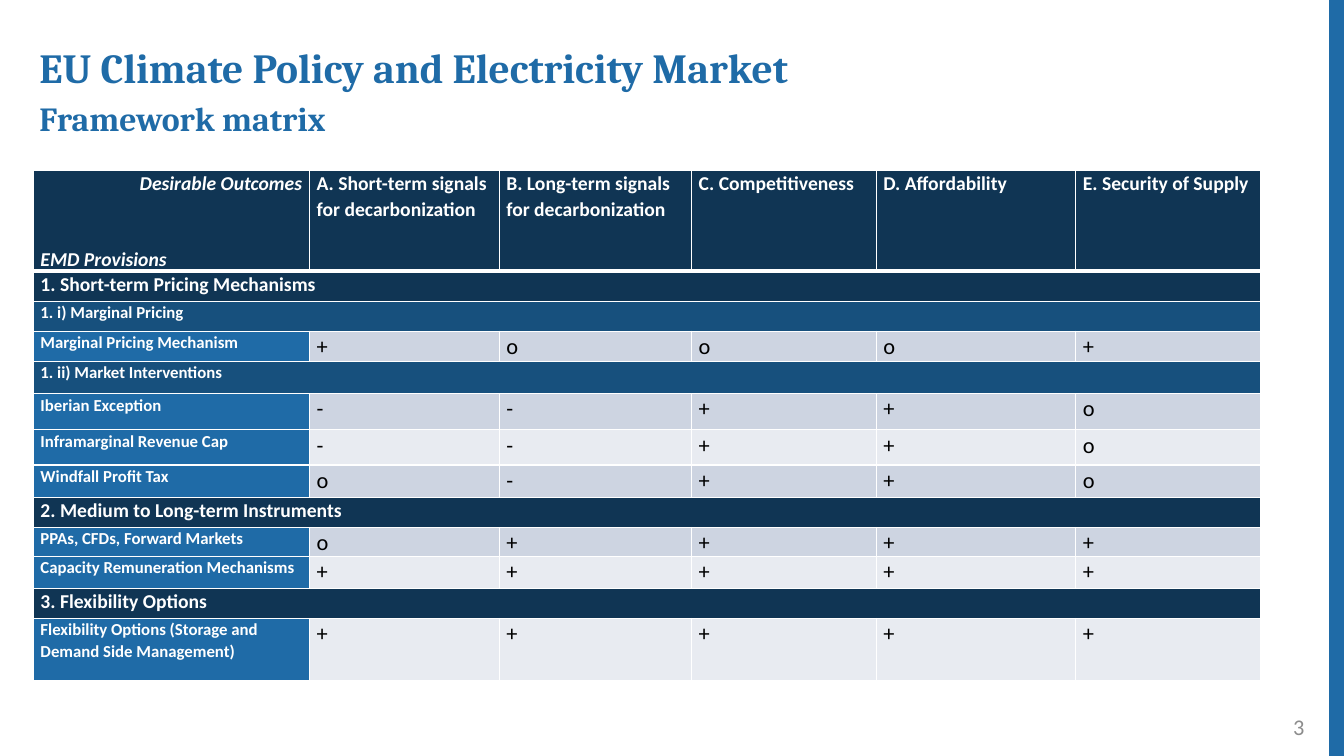
from lxml import etree
from pptx import Presentation
from pptx.dml.color import RGBColor
from pptx.enum.shapes import MSO_CONNECTOR
from pptx.enum.text import MSO_ANCHOR, MSO_AUTO_SIZE, PP_ALIGN
from pptx.oxml.ns import qn
from pptx.util import Cm, Pt

LEFT, RIGHT = PP_ALIGN.LEFT, PP_ALIGN.RIGHT
TOP, MIDDLE = MSO_ANCHOR.TOP, MSO_ANCHOR.MIDDLE
NO_AUTOFIT = MSO_AUTO_SIZE.NONE
STRAIGHT = MSO_CONNECTOR.STRAIGHT

NAVY, MID_BLUE, BLUE = "103554", "17507D", "1F6BA7"
BANDS = ("E8EBF1", "CDD4E1")  # even and odd table rows
WHITE, BLACK, GREY = "FFFFFF", "000000", "8C8C8C"

COL_WIDTHS = (6.96, 4.78, 4.85, 4.65, 5.03, 4.67)
OUTCOMES = ("A. Short-term signals for decarbonization",
            "B. Long-term signals for decarbonization",
            "C. Competitiveness", "D. Affordability", "E. Security of Supply")
HEADER_HEIGHT = 2.49

# Kind of row, height in cm, label, ratings for outcomes A to E
ROWS = (
    ("section", 0.76, "1. Short-term Pricing Mechanisms", ""),
    ("group", 0.76, "1. i) Marginal Pricing", ""),
    ("provision", 0.76, "Marginal Pricing Mechanism", "+ooo+"),
    ("group", 0.81, "1. ii) Market Interventions", ""),
    ("provision", 0.91, "Iberian Exception", "--++o"),
    ("provision", 0.89, "Inframarginal Revenue Cap", "--++o"),
    ("provision", 0.81, "Windfall Profit Tax", "o-++o"),
    ("section", 0.76, "2. Medium to Long-term Instruments", ""),
    ("provision", 0.71, "PPAs, CFDs, Forward Markets", "o++++"),
    ("provision", 0.81, "Capacity Remuneration Mechanisms", "+++++"),
    ("section", 0.76, "3. Flexibility Options", ""),
    ("provision", 1.57,
     "Flexibility Options (Storage and Demand Side Management)", "+++++"),
)
LABEL_STYLES = {"section": (NAVY, 14), "group": (MID_BLUE, 12), "provision": (BLUE, 12)}


def rgb(hex_colour):
    return RGBColor.from_string(hex_colour)


def write(p, text, size=14, colour=WHITE, font="Calibri", bold=False,
          italic=False, align=LEFT, spacing=1.07, before=0):
    p.alignment = align
    p.line_spacing = spacing
    p.space_before = Pt(before)
    r = p.add_run()
    r.text = text
    r.font.name = font
    r.font.size = Pt(size)
    r.font.bold = bold
    r.font.italic = italic
    r.font.color.rgb = rgb(colour)


def add_border(cell, side, width):
    ln = etree.SubElement(cell._tc.get_or_add_tcPr(), qn("a:ln" + side), w=str(Pt(width)))
    fill = etree.SubElement(ln, qn("a:solidFill"))
    etree.SubElement(fill, qn("a:srgbClr"), val=WHITE)


def format_cell(cell, colour, top=1, bottom=1):
    cell.margin_left = cell.margin_right = Cm(0.18)
    cell.margin_top = cell.margin_bottom = 0
    for side, width in (("L", 1), ("R", 1), ("T", top), ("B", bottom)):
        add_border(cell, side, width)
    cell.fill.solid()
    cell.fill.fore_color.rgb = rgb(colour)


def add_heading(slide):
    title = slide.shapes.title
    title.left, title.top, title.width, title.height = Cm(0.74), Cm(1.17), Cm(30.38), Cm(2.57)
    tf = title.text_frame
    tf.auto_size = NO_AUTOFIT
    tf.vertical_anchor = TOP
    style = dict(colour=BLUE, font="Cambria", bold=True, spacing=0.8)
    write(tf.paragraphs[0], "EU Climate Policy and Electricity Market", size=29.6, **style)
    write(tf.add_paragraph(), "Framework matrix", size=24.1, before=10, **style)


def fill_header(table):
    table.rows[0].height = Cm(HEADER_HEIGHT)
    for cell in table.rows[0].cells:
        format_cell(cell, NAVY, bottom=3)
    # The corner cell names both axes
    tf = table.cell(0, 0).text_frame
    write(tf.paragraphs[0], "Desirable Outcomes", bold=True, italic=True, align=RIGHT)
    write(tf.add_paragraph(), "EMD Provisions", bold=True, italic=True, before=36)
    for col, outcome in enumerate(OUTCOMES, 1):
        write(table.cell(0, col).text_frame.paragraphs[0], outcome, bold=True)


def fill_row(table, index, kind, height, label, ratings):
    table.rows[index].height = Cm(height)
    label_fill, size = LABEL_STYLES[kind]
    for col, cell in enumerate(table.rows[index].cells):
        colour = BANDS[index % 2] if ratings and col else label_fill
        format_cell(cell, colour, top=3 if index == 1 else 1)
    first = table.cell(index, 0)
    if not ratings:
        first.merge(table.cell(index, len(COL_WIDTHS) - 1))
    write(first.text_frame.paragraphs[0], label, size=size, bold=True)
    for col, rating in enumerate(ratings, 1):
        write(table.cell(index, col).text_frame.paragraphs[0], rating, size=16, colour=BLACK)


def add_matrix(slide):
    height = HEADER_HEIGHT + sum(row[1] for row in ROWS)
    table = slide.shapes.add_table(len(ROWS) + 1, len(COL_WIDTHS), Cm(0.84), Cm(4.29),
                                   Cm(sum(COL_WIDTHS)), Cm(height)).table
    for column, width in zip(table.columns, COL_WIDTHS):
        column.width = Cm(width)
    fill_header(table)
    for index, row in enumerate(ROWS, 1):
        fill_row(table, index, *row)


def add_edge_bar(slide, slide_height):
    line = slide.shapes.add_connector(STRAIGHT, Cm(33.7), 0, Cm(33.7), slide_height)
    line.line.color.rgb = rgb(BLUE)
    line.line.width = Pt(12)
    etree.SubElement(line._element.spPr, qn("a:effectLst"))


def add_page_number(slide, number):
    tf = slide.shapes.add_textbox(Cm(25.5), Cm(17.81), Cm(7.62), Cm(1.02)).text_frame
    tf.word_wrap = True
    tf.vertical_anchor = MIDDLE
    write(tf.paragraphs[0], number, size=16, colour=GREY, align=RIGHT, spacing=1.0)


def main():
    prs = Presentation()
    prs.slide_width, prs.slide_height = Cm(33.87), Cm(19.05)
    slide = prs.slides.add_slide(prs.slide_layouts.get_by_name("Title Only"))
    add_edge_bar(slide, prs.slide_height)
    add_page_number(slide, "3")
    add_heading(slide)
    add_matrix(slide)
    prs.save("out.pptx")


if __name__ == "__main__":
    main()
